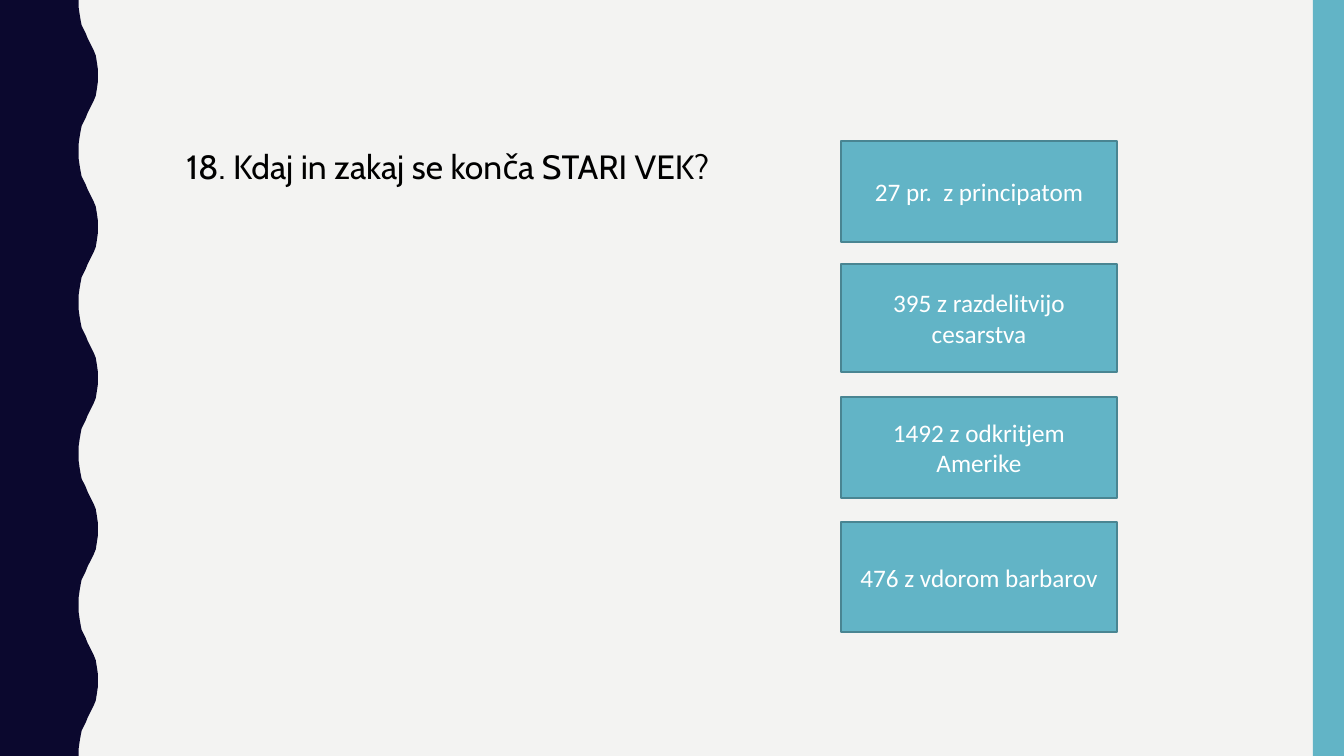
"""Build a quiz slide with one question and four answer boxes."""
import pptx
import pptx.util
import pptx.dml.color
import pptx.enum.shapes
import pptx.enum.text

PX = 9144
WIDE, HIGH = 1333, 750
NAVY, TEAL, EDGE, PALE = "0B082E", "62B4C6", "498592", "F3F3F2"
WHITE, BLACK = "FFFFFF", "000000"

QUERY = "18. Kdaj in zakaj se konča STARI VEK?"
ANSWERS = [
    ("27 pr.  z principatom", 140, 100),
    ("395 z razdelitvijo cesarstva", 262, 107),
    ("1492 z odkritjem Amerike", 394, 100),
    ("476 z vdorom barbarov", 518, 109),
]
LEFT, SPAN = 834, 274

PERIOD = 150
RISE = [(78, 0), (78, 7), (79, 14), (80, 20), (81, 25), (83, 29), (85, 33),
        (87, 38), (89, 42), (91, 46), (93, 50), (95, 55), (96, 61), (97, 68),
        (97, 75)]


def color(code):
    return pptx.dml.color.RGBColor.from_string(code)


def paint(shape, fill, line=None):
    shape.shadow.inherit = False
    shape.fill.solid()
    shape.fill.fore_color.rgb = color(fill)
    if line:
        shape.line.color.rgb = color(line)
        shape.line.width = pptx.util.Pt(1)
    else:
        shape.line.fill.background()


def write(shape, text, font, size, code):
    frame = shape.text_frame
    frame.text = text
    frame.word_wrap = True
    for run in frame.paragraphs[0].runs:
        run.font.name = font
        run.font.size = pptx.util.Pt(size)
        run.font.color.rgb = color(code)
    return frame


def block(shapes, *place):
    kind = pptx.enum.shapes.MSO_SHAPE.RECTANGLE
    return shapes.add_shape(kind, *(n * PX for n in place))


def wave(shapes):
    fall = [(x, PERIOD - y) for x, y in reversed(RISE[:-1])]
    edge = [(x, y + top) for top in range(0, HIGH, PERIOD)
            for x, y in RISE + fall[:-1]]
    pen = shapes.build_freeform(0, 0, scale=PX)
    pen.add_line_segments(edge + [(RISE[0][0], HIGH), (0, HIGH)], close=True)
    paint(pen.convert_to_shape(), NAVY)


def main():
    deck = pptx.Presentation()
    deck.slide_width, deck.slide_height = WIDE * PX, HIGH * PX
    slide = deck.slides.add_slide(deck.slide_layouts[6])
    slide.background.fill.solid()
    slide.background.fill.fore_color.rgb = color(PALE)
    shapes = slide.shapes

    wave(shapes)
    paint(block(shapes, 1302, 0, WIDE - 1302, HIGH), TEAL)

    for text, top, tall in ANSWERS:
        box = block(shapes, LEFT, top, SPAN, tall)
        paint(box, TEAL, EDGE)
        frame = write(box, text, "Calibri", 18, WHITE)
        frame.vertical_anchor = pptx.enum.text.MSO_ANCHOR.MIDDLE
        frame.paragraphs[0].alignment = pptx.enum.text.PP_ALIGN.CENTER

    title = shapes.add_textbox(*(n * PX for n in (175, 140, 614, 50)))
    frame = write(title, QUERY, "Cabin", 24, BLACK)
    frame.auto_size = pptx.enum.text.MSO_AUTO_SIZE.SHAPE_TO_FIT_TEXT

    deck.save("out.pptx")


if __name__ == "__main__":
    main()
